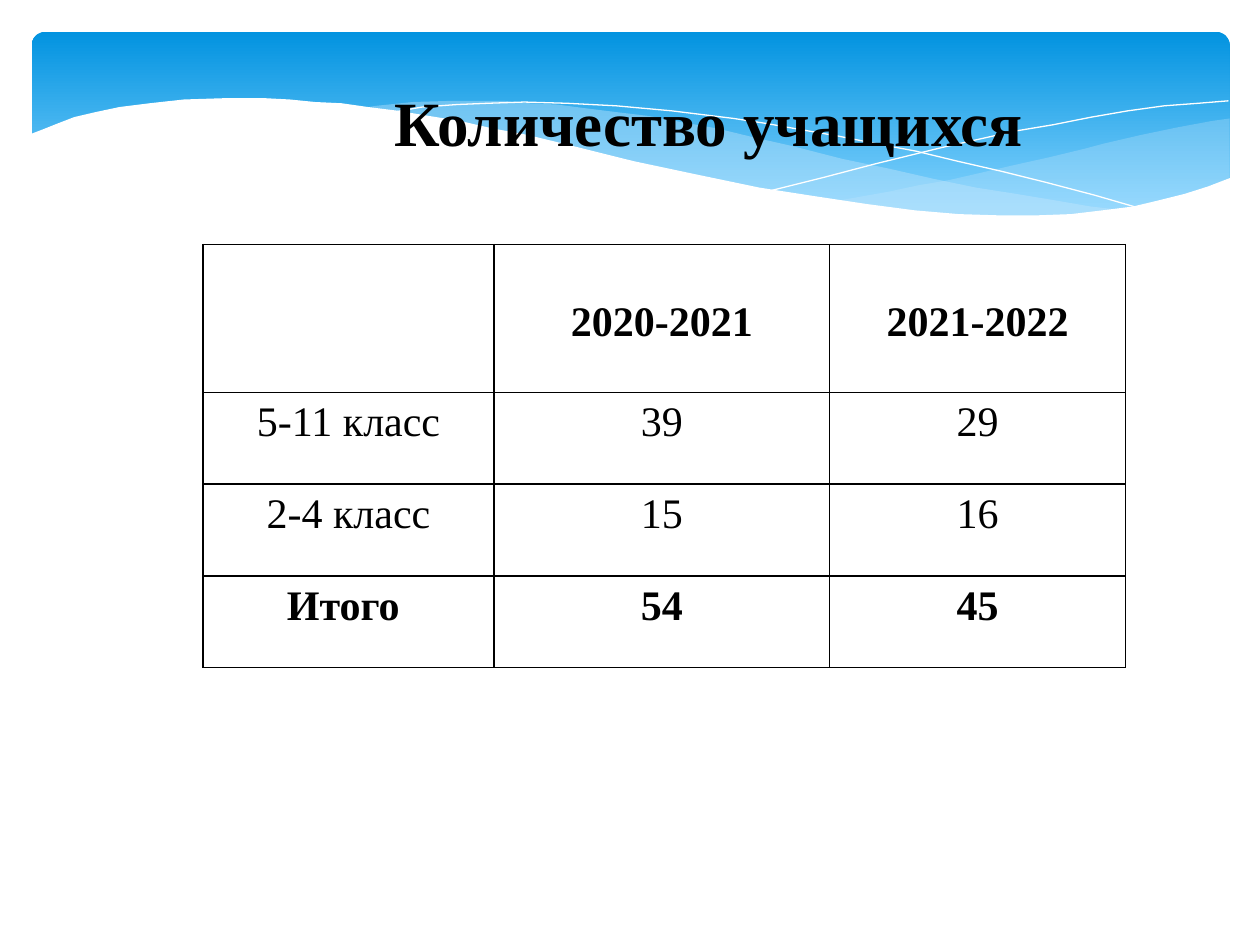
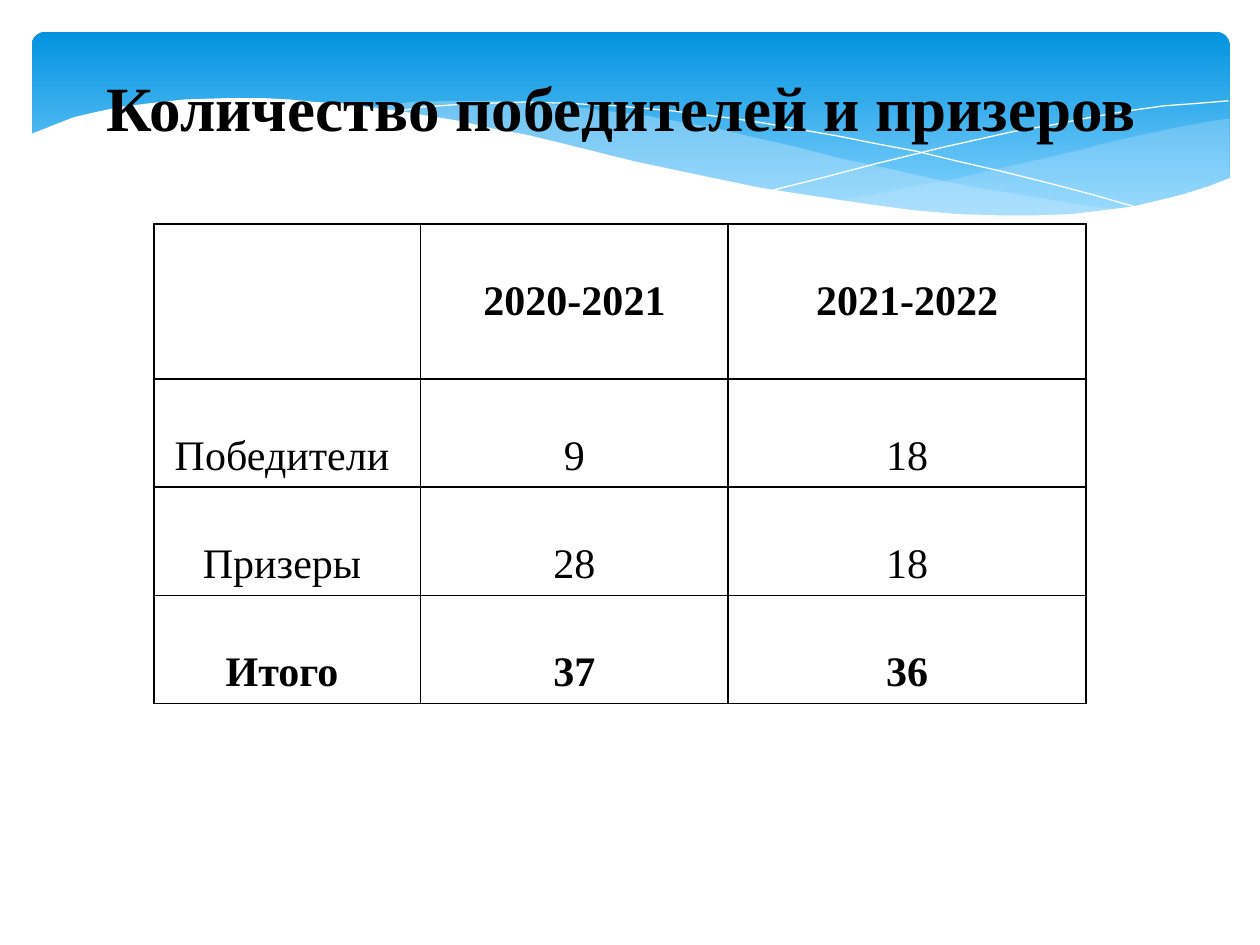
"""Builds two slides with school tables under a shared blue wave band."""
from lxml.etree import SubElement
from pptx import Presentation
from pptx.dml.color import RGBColor
from pptx.enum.shapes import MSO_SHAPE
from pptx.enum.text import MSO_ANCHOR, MSO_AUTO_SIZE, PP_ALIGN
from pptx.oxml import parse_xml
from pptx.oxml.ns import nsdecls, qn
from pptx.util import Cm, Pt

FONT = "Times New Roman"
BLACK, WHITE, PALE_BLUE = "000000", "FFFFFF", "C6E7FC"
BAND_TOP, BAND_BOTTOM = "0293E0", "83D3FE"
WAVE_UNIT = Cm(2.54) / 100
HEADER_LEAD = 0.95

SLIDES = [
    {
        "title": "Количество учащихся",
        "title_at": (7.7, 1.32, 13.64, 2.03),
        "table_at": (4.09, 4.93),
        "columns": (5.87, 6.76, 5.97),
        "header_height": 2.98,
        "row_height": 1.85,
        "row_lead": 0,
        "rows": [
            ("", "2020-2021", "2021-2022"),
            ("5-11 класс", "39", "29"),
            ("2-4 класс", "15", "16"),
            ("Итого ", "54", "45"),
        ],
    },
    {
        "title": "Количество победителей и призеров",
        "title_at": (1.9, 1.02, 22.1, 1.9),
        "table_at": (3.1, 4.52),
        "columns": (5.38, 6.2, 7.21),
        "header_height": 3.12,
        "row_height": 2.18,
        "row_lead": 0.95,
        "rows": [
            ("", "2020-2021", "2021-2022"),
            ("Победители ", "9", "18"),
            ("Призеры ", "28", "18"),
            ("Итого ", "37", "36"),
        ],
    },
]

RIGHT_WAVE = [
    (976, 94), (962, 96), (935, 101), (906, 107), (876, 114), (861, 118),
    (832, 125), (805, 131), (779, 137), (753, 143), (729, 147), (706, 152),
    (661, 160), (691, 164), (719, 167), (745, 169), (769, 171), (792, 172),
    (824, 172), (854, 170), (881, 167), (905, 163), (928, 158), (949, 152),
    (963, 147), (976, 141),
]
LONG_WAVE = [
    (893, 167), (866, 164), (837, 159), (807, 154), (775, 149), (741, 142),
    (706, 134), (668, 126), (629, 116), (598, 109), (569, 102), (541, 97),
    (514, 92), (489, 89), (465, 86), (442, 83), (420, 82), (399, 80),
    (361, 80), (328, 81), (299, 84), (286, 86), (323, 90), (362, 97),
    (404, 106), (449, 116), (491, 126), (530, 135), (566, 143), (601, 150),
    (634, 156), (665, 161), (695, 165), (722, 168), (748, 170), (773, 172),
    (807, 173), (838, 172), (867, 170), (884, 168),
]
FALLING_LINE = [
    (309, 90), (318, 88), (335, 85), (363, 83), (387, 82), (416, 81),
    (450, 82), (489, 84), (533, 88), (582, 94), (608, 98), (636, 103),
    (665, 108), (695, 114), (727, 120), (760, 128), (795, 136), (831, 145),
    (869, 155), (907, 166),
]
RISING_LINE = [
    (613, 151), (653, 141), (695, 130), (748, 117), (806, 104), (836, 99),
    (866, 93), (895, 88), (924, 84), (951, 82), (975, 80),
]
WHITE_WAVE = [
    (977, 141), (959, 148), (940, 154), (920, 159), (899, 164), (875, 167),
    (850, 170), (823, 171), (793, 171), (761, 170), (726, 167), (688, 162),
    (648, 156), (603, 149), (555, 139), (503, 128), (475, 121), (447, 114),
    (418, 107), (391, 102), (365, 96), (340, 92), (316, 88), (292, 85),
    (271, 82), (250, 81), (230, 79), (211, 78), (177, 78), (146, 79),
    (119, 82), (95, 85), (76, 89), (59, 93), (46, 98), (36, 102), (23, 107),
    (23, 224), (977, 224),
]
WAVES = [
    (RIGHT_WAVE, PALE_BLUE, 29),
    (LONG_WAVE, PALE_BLUE, 40),
    (FALLING_LINE, None, 100),
    (RISING_LINE, None, 100),
    (WHITE_WAVE, WHITE, 100),
]


def color(code):
    """Returns the colour for a hex string."""
    return RGBColor.from_string(code)


def style_text(para, size, bold):
    """Formats a paragraph and its runs."""
    para.line_spacing = 1.15
    for span in para.runs:
        span.font.name = FONT
        span.font.size = Pt(size)
        span.font.bold = bold
        span.font.color.rgb = color(BLACK)


def draw_band(page):
    """Draws the gradient band and returns it."""
    band = page.shapes.add_shape(
        MSO_SHAPE.ROUNDED_RECTANGLE, Cm(0.64), Cm(0.64), Cm(24.15), Cm(3.96))
    band.adjustments[0] = 0.07
    band.shadow.inherit = False
    band.line.fill.background()
    band.fill.gradient()
    band.fill.gradient_angle = 270
    stops = zip(band.fill.gradient_stops, (BAND_TOP, BAND_BOTTOM), (0, 0.9))
    for stop, code, position in stops:
        stop.color.rgb = color(code)
        stop.position = position
    return band


def draw_wave(page, points, code, opacity):
    """Draws a filled wave, or a thin white curve when no fill is given."""
    builder = page.shapes.build_freeform(*points[0], scale=WAVE_UNIT)
    builder.add_line_segments(points[1:], close=code is not None)
    wave = builder.convert_to_shape()
    wave.shadow.inherit = False
    if code is None:
        wave.fill.background()
        wave.line.color.rgb = color(WHITE)
        wave.line.width = Pt(0)
        return wave
    wave.line.fill.background()
    wave.fill.solid()
    wave.fill.fore_color.rgb = color(code)
    if opacity < 100:
        tint = next(wave.element.iter(qn("a:srgbClr")))
        SubElement(tint, qn("a:alpha"), val=str(opacity * 1000))
    return wave


def decorate_layout(layout, page):
    """Draws the band and waves once and moves them to the shared layout."""
    parts = [draw_band(page)] + [draw_wave(page, *wave) for wave in WAVES]
    for part in parts:
        layout.shapes.element.append(part.element)


def add_title(page, text, place):
    """Fills and places the title placeholder."""
    title = page.shapes.title
    title.left, title.top, title.width, title.height = map(Cm, place)
    frame = title.text_frame
    frame.text = text
    frame.word_wrap = False
    frame.auto_size = MSO_AUTO_SIZE.SHAPE_TO_FIT_TEXT
    frame.vertical_anchor = MSO_ANCHOR.TOP
    para = frame.paragraphs[0]
    para.alignment = PP_ALIGN.LEFT
    para.space_before, para.space_after = Pt(0), Pt(10)
    style_text(para, 36, True)


def add_borders(cell):
    """Gives a cell thin black borders on all sides."""
    properties = cell._tc.get_or_add_tcPr()
    for index, side in enumerate("LRTB"):
        properties.insert(index, parse_xml(
            f'<a:ln{side} {nsdecls("a")} w="12700"><a:solidFill>'
            f'<a:srgbClr val="{BLACK}"/></a:solidFill></a:ln{side}>'))


def fill_cell(cell, text, lead, bold):
    """Writes one table cell with its text set below a leading gap."""
    cell.text = text
    cell.margin_left = cell.margin_right = Cm(0.18)
    cell.margin_top, cell.margin_bottom = Cm(lead), Cm(0)
    cell.vertical_anchor = MSO_ANCHOR.TOP
    cell.fill.background()
    add_borders(cell)
    para = cell.text_frame.paragraphs[0]
    para.alignment = PP_ALIGN.CENTER
    style_text(para, 24, bold)


def add_grid(page, content):
    """Adds the table with a bold header row and a bold total row."""
    rows, columns = content["rows"], content["columns"]
    last = len(rows) - 1
    heights = [content["header_height"]] + [content["row_height"]] * last
    left, top = content["table_at"]
    table = page.shapes.add_table(
        len(rows), len(columns), Cm(left), Cm(top),
        Cm(sum(columns)), Cm(sum(heights))).table
    table.first_row = table.horz_banding = False
    for column, width in zip(table.columns, columns):
        column.width = Cm(width)
    for index, (row, height) in enumerate(zip(table.rows, heights)):
        row.height = Cm(height)
        lead = content["row_lead"] if index else HEADER_LEAD
        for cell, text in zip(row.cells, rows[index]):
            fill_cell(cell, text, lead if text else 0, index in (0, last))


def main():
    """Builds and saves the deck."""
    deck = Presentation()
    deck.slide_width, deck.slide_height = Cm(25.4), Cm(19.05)
    layout = deck.slide_layouts[5]
    pages = [deck.slides.add_slide(layout) for _ in SLIDES]
    decorate_layout(layout, pages[0])
    for page, content in zip(pages, SLIDES):
        add_title(page, content["title"], content["title_at"])
        add_grid(page, content)
    deck.save("out.pptx")


if __name__ == "__main__":
    main()
